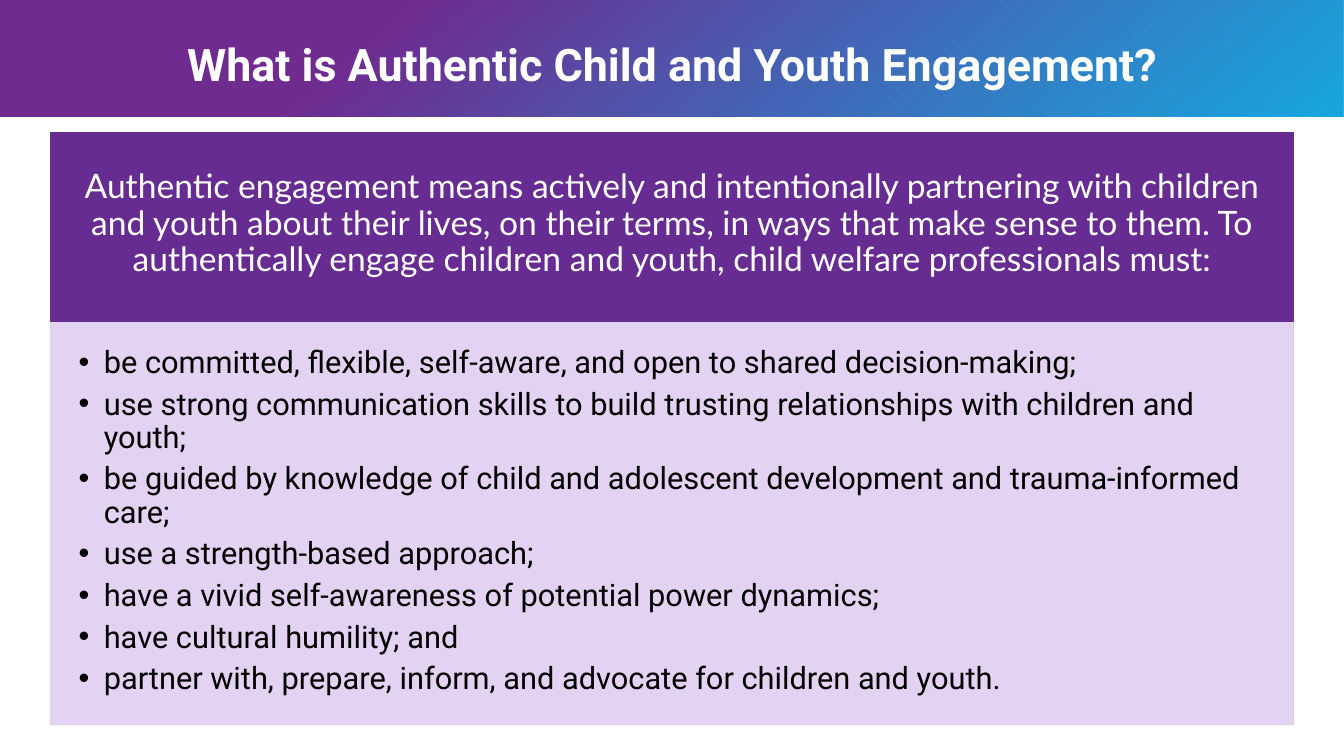
import collections

import pptx
import pptx.dml.color
import pptx.enum.shapes
import pptx.enum.text
import pptx.oxml.ns
import pptx.util
from lxml import etree

RGBColor = pptx.dml.color.RGBColor
Inches = pptx.util.Inches
Align = pptx.enum.text.PP_ALIGN
Anchor = pptx.enum.text.MSO_ANCHOR

WHITE = RGBColor(0xFF, 0xFF, 0xFF)
BLACK = RGBColor(0x00, 0x00, 0x00)
PLUM = RGBColor(0x70, 0x2B, 0x90)
SKY = RGBColor(0x00, 0x9D, 0xDA)
PURPLE = RGBColor(0x66, 0x2C, 0x91)
LILAC = RGBColor(0xE1, 0xCE, 0xF0)
LILAC_EDGE = RGBColor(0xD3, 0xCD, 0xDC)

WIDTH, HEIGHT = 26.67, 15
MARGIN = 1
BANNER_HEIGHT = 2.31
INTRO_TOP, INTRO_HEIGHT = 2.62, 3.76
LIST_HEIGHT = 8

Box = collections.namedtuple("Box", "left top width height")

TITLE = "What is Authentic Child and Youth Engagement?"
INTRO = (
    "Authentic engagement means actively and intentionally partnering with "
    "children and youth about their lives, on their terms, in ways that make "
    "sense to them. To authentically engage children and youth, child welfare "
    "professionals must:"
)
DUTIES = [
    "be committed, flexible, self-aware, and open to shared decision-making;",
    "use strong communication skills to build trusting relationships with children and youth;",
    "be guided by knowledge of child and adolescent development and trauma-informed care;",
    "use a strength-based approach;",
    "have a vivid self-awareness of potential power dynamics;",
    "have cultural humility; and",
    "partner with, prepare, inform, and advocate for children and youth.",
]


def place(shape, box):
    shape.left, shape.top, shape.width, shape.height = map(Inches, box)


def add_rectangle(page, box):
    shape = page.shapes.add_shape(
        pptx.enum.shapes.MSO_SHAPE.RECTANGLE, *map(Inches, box))
    shape.shadow.inherit = False
    return shape


def paint(shape, fill, line):
    shape.fill.solid()
    shape.fill.fore_color.rgb = fill
    shape.line.color.rgb = line
    shape.line.width = pptx.util.Pt(1)


def set_opacity(parent, percent):
    for color in parent.iter(pptx.oxml.ns.qn("a:srgbClr")):
        alpha = etree.SubElement(color, pptx.oxml.ns.qn("a:alpha"))
        alpha.set("val", str(percent * 1000))


def add_bullet(paragraph, margin, hanging):
    properties = paragraph._p.get_or_add_pPr()
    properties.set("marL", str(Inches(margin)))
    properties.set("indent", str(-Inches(hanging)))
    etree.SubElement(properties, pptx.oxml.ns.qn("a:buFont")).set("typeface", "Arial")
    etree.SubElement(properties, pptx.oxml.ns.qn("a:buChar")).set("char", "•")


def write(shape, lines, *, size, font, color, bold=False, align=Align.LEFT,
          anchor=Anchor.TOP, insets=(0.1, 0.05, 0.1, 0.05), after=0, bullets=False):
    frame = shape.text_frame
    frame.word_wrap = True
    frame.auto_size = pptx.enum.text.MSO_AUTO_SIZE.NONE
    frame.vertical_anchor = anchor
    (frame.margin_left, frame.margin_top,
     frame.margin_right, frame.margin_bottom) = map(Inches, insets)
    for index, line in enumerate(lines):
        paragraph = frame.add_paragraph() if index else frame.paragraphs[0]
        if bullets:
            paragraph.level = 1
            add_bullet(paragraph, 0.8, 0.5)
        paragraph.alignment = align
        paragraph.line_spacing = 0.9
        paragraph.space_before = pptx.util.Pt(0)
        paragraph.space_after = pptx.util.Pt(after)
        span = paragraph.add_run()
        span.text = line
        span.font.size = pptx.util.Pt(size)
        span.font.name = font
        span.font.bold = bold
        span.font.color.rgb = color


def build_banner(page, box):
    banner = add_rectangle(page, box)
    banner.line.fill.background()
    banner.fill.gradient()
    banner.fill.gradient_angle = 310
    first, last = banner.fill.gradient_stops
    first.position, first.color.rgb = 0.28, PLUM
    last.position, last.color.rgb = 0.99, SKY
    set_opacity(last._gs, 90)
    title = page.shapes.title
    title.element.addprevious(banner.element)
    place(title, Box(box.width * 0.075, 0.8, box.width * 0.85, box.height))
    write(title, [TITLE], size=64, font="Roboto", color=WHITE, bold=True,
          align=Align.CENTER)


def build_intro(page, box):
    panel = add_rectangle(page, box)
    paint(panel, PURPLE, PURPLE)
    write(panel, [INTRO], size=48, font="Lato", color=WHITE, align=Align.CENTER,
          anchor=Anchor.MIDDLE, insets=(0.37, 0.3, 0.37, 0.4))


def build_duties(page, box):
    body = page.placeholders[1]
    place(body, box)
    paint(body, LILAC, LILAC_EDGE)
    set_opacity(body.element.spPr, 90)
    write(body, DUTIES, size=44, font="Roboto", color=BLACK,
          insets=(0.26, 0.5, 0.34, 0.39), after=12, bullets=True)


def main():
    deck = pptx.Presentation()
    deck.slide_width, deck.slide_height = Inches(WIDTH), Inches(HEIGHT)
    page = deck.slides.add_slide(deck.slide_layouts[1])
    content_width = WIDTH - 2 * MARGIN
    build_banner(page, Box(0, 0, WIDTH, BANNER_HEIGHT))
    build_intro(page, Box(MARGIN, INTRO_TOP, content_width, INTRO_HEIGHT))
    build_duties(page, Box(MARGIN, INTRO_TOP + INTRO_HEIGHT, content_width, LIST_HEIGHT))
    deck.save("out.pptx")


if __name__ == "__main__":
    main()
